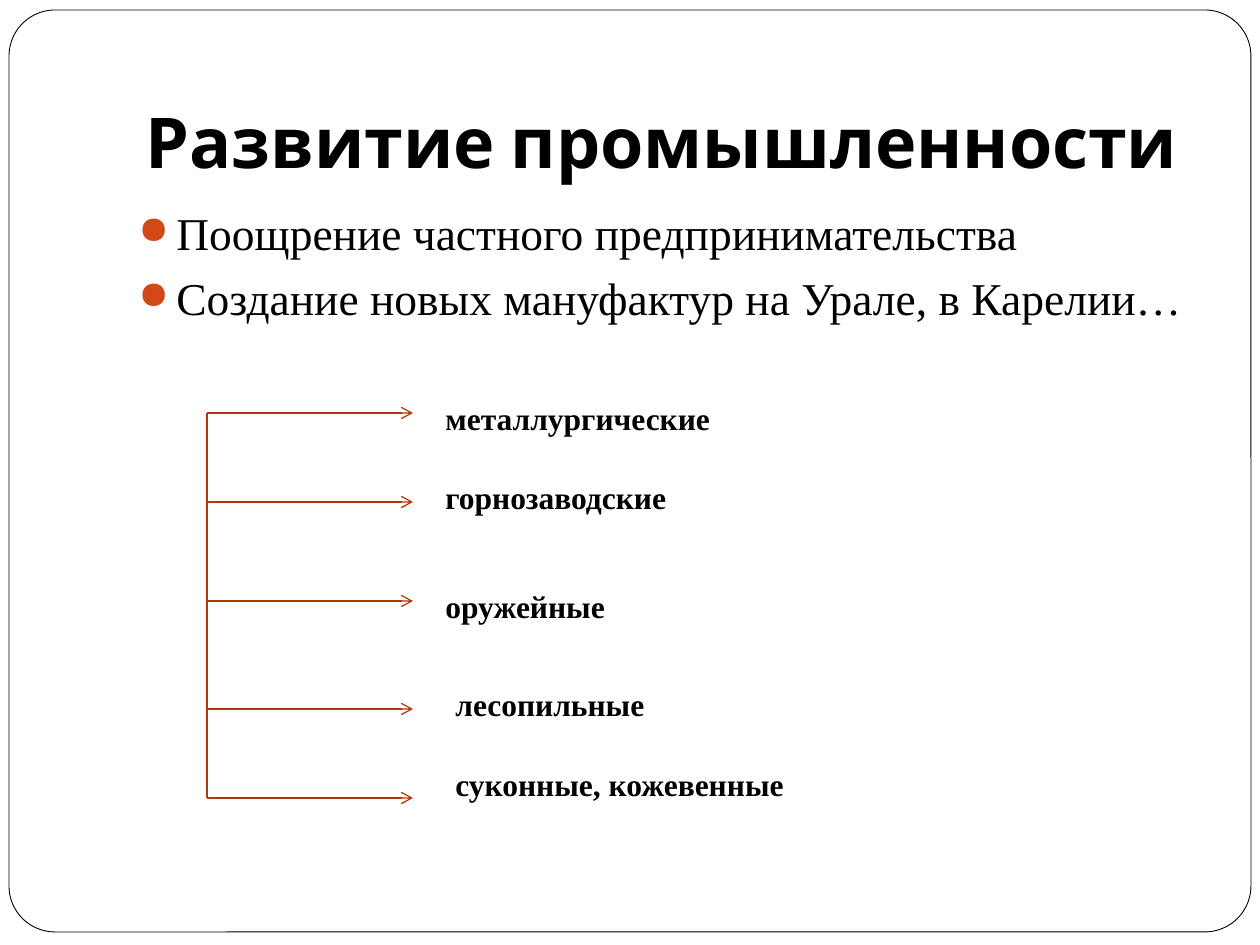
from lxml.etree import SubElement
from pptx import Presentation
from pptx.dml.color import RGBColor
from pptx.enum.shapes import MSO_CONNECTOR, MSO_SHAPE
from pptx.enum.text import MSO_ANCHOR, MSO_AUTO_SIZE, PP_ALIGN
from pptx.oxml.ns import qn
from pptx.util import Emu, Pt

BLACK = RGBColor(0x00, 0x00, 0x00)
WHITE = RGBColor(0xFF, 0xFF, 0xFF)
ORANGE = RGBColor(0xD3, 0x48, 0x17)
RUST = RGBColor(0xB1, 0x36, 0x0B)

BULLETS = [
    "Поощрение частного предпринимательства",
    "Создание новых мануфактур на Урале, в Карелии…",
]
# Arrow height, then label left, top, width and wording
BRANCHES = [
    (413, 433, 393, 748, "металлургические"),
    (502, 433, 472, 403, "горнозаводские"),
    (601, 433, 581, 571, "оружейные"),
    (709, 443, 679, 581, "лесопильные"),
    (798, 443, 759, 452, "суконные, кожевенные"),
]
TRUNK_X, ARROW_END = 207, 413


def px(length):
    return Emu(round(length * 914400 / 126))


class SlideBuilder:
    title_font = "Cabin"
    text_font = "Times New Roman"

    def __init__(self, deck):
        self.slide = deck.slides.add_slide(deck.slide_layouts[6])

    def frame(self, left, top, width, height):
        shape = self.slide.shapes.add_shape(
            MSO_SHAPE.ROUNDED_RECTANGLE, px(left), px(top), px(width), px(height))
        shape.adjustments[0] = 0.05
        shape.shadow.inherit = False
        shape.fill.solid()
        shape.fill.fore_color.rgb = WHITE
        shape.line.color.rgb = BLACK
        shape.line.width = Pt(0.5)

    def text(self, left, top, width, height, lines, size, font=text_font, bold=False):
        box = self.slide.shapes.add_textbox(px(left), px(top), px(width), px(height))
        box.text_frame.word_wrap = True
        box.text_frame.text = "\n".join(lines)
        for para in box.text_frame.paragraphs:
            for span in para.runs:
                span.font.name = font
                span.font.size = Pt(size)
                span.font.bold = bold
                span.font.color.rgb = BLACK
        return box.text_frame

    def title(self, left, top, width, height, wording):
        text_frame = self.text(left, top, width, height, [wording], 40, self.title_font, True)
        text_frame.vertical_anchor = MSO_ANCHOR.BOTTOM
        text_frame.margin_bottom = Pt(7.2)
        text_frame.paragraphs[0].alignment = PP_ALIGN.CENTER

    def bullets(self, left, top, width, height, lines):
        text_frame = self.text(left, top, width, height, lines, 26)
        for para in text_frame.paragraphs:
            para.space_before = Pt(5.8)
            properties = para._p.get_or_add_pPr()
            properties.set("marL", str(px(38)))
            properties.set("indent", str(-px(38)))
            colour = SubElement(properties, qn("a:buClr"))
            SubElement(colour, qn("a:srgbClr"), val=str(ORANGE))
            SubElement(properties, qn("a:buSzPct"), val="85000")
            SubElement(properties, qn("a:buChar"), char="●")

    def label(self, left, top, width, wording):
        text_frame = self.text(left, top, width, 50, [wording], 18, bold=True)
        text_frame.auto_size = MSO_AUTO_SIZE.SHAPE_TO_FIT_TEXT

    def line(self, x1, y1, x2, y2, arrow=False):
        connector = self.slide.shapes.add_connector(
            MSO_CONNECTOR.STRAIGHT, px(x1), px(y1), px(x2), px(y2))
        connector.line.color.rgb = RUST
        connector.line.width = Pt(0.75)
        if arrow:
            SubElement(connector.line._get_or_add_ln(), qn("a:tailEnd"), type="arrow")
        SubElement(connector._element.spPr, qn("a:effectLst"))


def main():
    deck = Presentation()
    deck.slide_width, deck.slide_height = px(1260), px(945)
    page = SlideBuilder(deck)

    # Border, heading and main points
    page.frame(9, 10, 1242, 922)
    page.title(126, 38, 1071, 157, "Развитие промышленности")
    page.bullets(126, 199, 1071, 630, BULLETS)

    # Trunk with one arrow and label per kind of manufactory
    page.line(TRUNK_X, BRANCHES[0][0], TRUNK_X, BRANCHES[-1][0])
    for arrow_y, left, top, width, wording in BRANCHES:
        page.line(TRUNK_X, arrow_y, ARROW_END, arrow_y, arrow=True)
        page.label(left, top, width, wording)

    deck.save("out.pptx")


if __name__ == "__main__":
    main()
